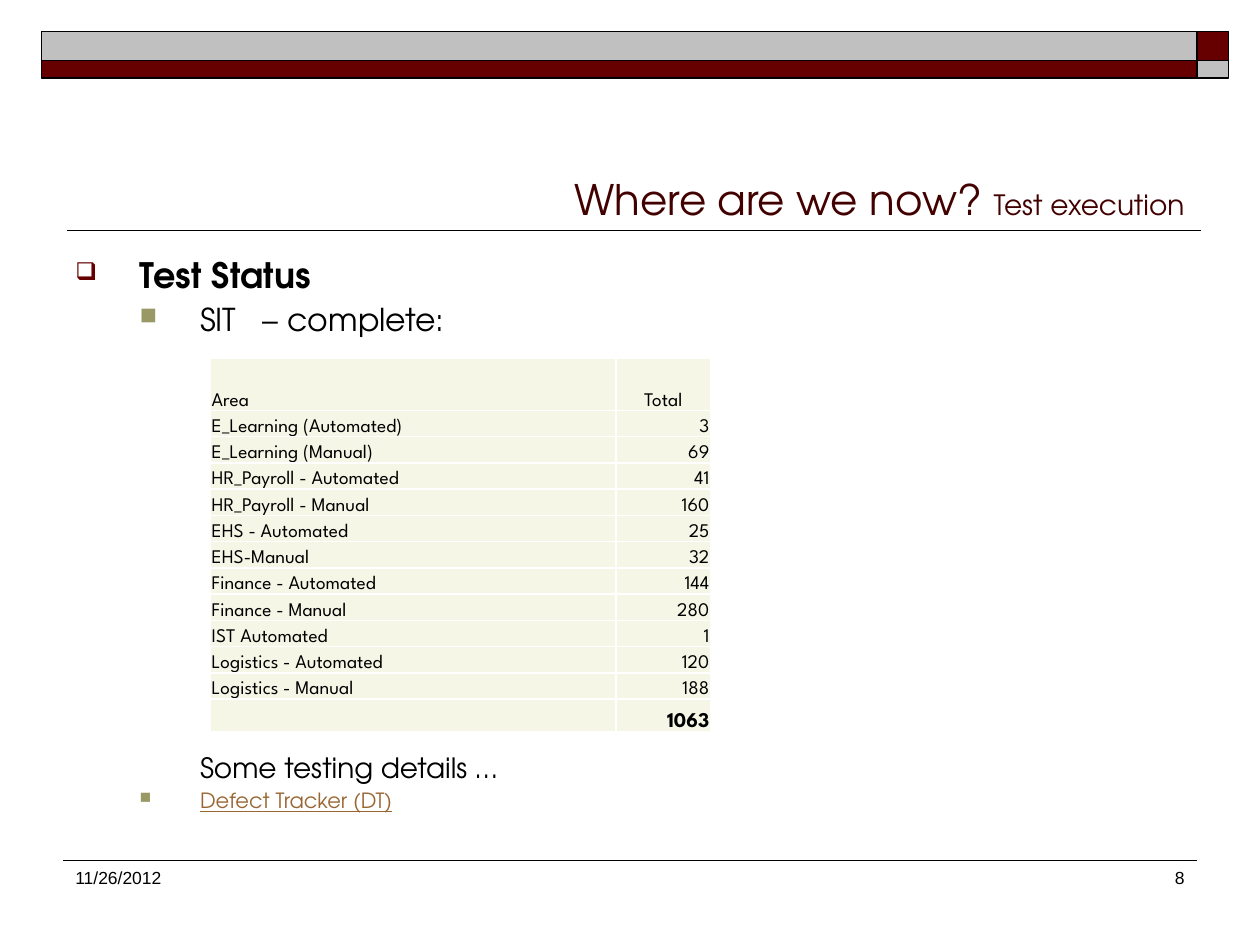
from lxml import etree
from pptx import Presentation
from pptx.dml.color import RGBColor
from pptx.enum.shapes import MSO_CONNECTOR, MSO_SHAPE
from pptx.enum.text import MSO_ANCHOR, PP_ALIGN
from pptx.oxml.ns import qn
from pptx.util import Inches, Pt

RECTANGLE, STRAIGHT = MSO_SHAPE.RECTANGLE, MSO_CONNECTOR.STRAIGHT
TOP, BOTTOM = MSO_ANCHOR.TOP, MSO_ANCHOR.BOTTOM
LEFT, CENTER, RIGHT = PP_ALIGN.LEFT, PP_ALIGN.CENTER, PP_ALIGN.RIGHT
HEADING_FONT, TABLE_FONT, FOOTER_FONT = "TeX Gyre Adventor", "League Spartan", "Arial"
COLORS = {
    "black": "000000", "white": "FFFFFF", "maroon": "660000", "silver": "C0C0C0",
    "title": "420000", "olive": "999966", "link": "996633", "cell": "F6F6E7",
}


def rgb(name):
    return RGBColor.from_string(COLORS[name])


def add_run(paragraph, text, font_name, size, color="black", **formats):
    run = paragraph.add_run()
    run.text = text
    run.font.color.rgb = rgb(color)
    for attribute, value in {"name": font_name, "size": Pt(size), **formats}.items():
        setattr(run.font, attribute, value)
    return run


prs = Presentation()
prs.slide_width, prs.slide_height = Inches(10), Inches(7.5)
slide = prs.slides.add_slide(prs.slide_layouts[6])
shapes = slide.shapes

for left, top, width, height, color in [
    (9.5, 0.25, 0.25, 0.23, "maroon"),
    (0.33, 0.25, 9.17, 0.23, "silver"),
    (0.33, 0.48, 9.17, 0.14, "maroon"),
    (9.5, 0.48, 0.25, 0.14, "silver"),
]:
    band = shapes.add_shape(RECTANGLE, Inches(left), Inches(top), Inches(width), Inches(height))
    band.shadow.inherit = False
    band.fill.solid()
    band.fill.fore_color.rgb = rgb(color)
    band.line.color.rgb = rgb("black")
    band.line.width = Pt(1)

for start, end, y, weight in [(0.53, 9.53, 1.83, 1), (0.5, 9.5, 6.83, 0.75)]:
    rule = shapes.add_connector(STRAIGHT, Inches(start), Inches(y), Inches(end), Inches(y))
    rule.line.color.rgb = rgb("black")
    rule.line.width = Pt(weight)
    etree.SubElement(rule._element.spPr, qn("a:effectLst"))

for left, top, width, height, anchor, align, runs in [
    (0.5, 6.83, 1.83, 0.5, TOP, LEFT, [("11/26/2012", FOOTER_FONT, 10, "black")]),
    (7.42, 6.83, 2.08, 0.5, TOP, RIGHT, [("8", FOOTER_FONT, 10, "black")]),
    (0.5, 0.58, 9, 1.25, BOTTOM, RIGHT, [
        ("Where are we now? ", HEADING_FONT, 24, "title"),
        ("Test execution", HEADING_FONT, 16, "title"),
    ]),
]:
    frame = shapes.add_textbox(Inches(left), Inches(top), Inches(width), Inches(height)).text_frame
    frame.word_wrap = True
    frame.vertical_anchor = anchor
    frame.paragraphs[0].alignment = align
    for run_values in runs:
        add_run(frame.paragraphs[0], *run_values)

TOPIC = {"margin": 0.51, "indent": -0.51, "bullet": ("❑", "maroon", 70)}
POINT = {"margin": 0.99, "indent": -0.48, "bullet": ("■", "olive", 75)}
PLAIN = {"margin": 0.99, "indent": 0, "bullet": None}
for top, height, lines in [
    (2, 0.8, [
        (TOPIC, 20, [("Test Status", "black", {"bold": True})]),
        (POINT, 18, [("SIT", "black", {}), (" ", "black", {}), ("– complete:", "black", {})]),
    ]),
    (5.94, 0.7, [
        (PLAIN, 16, [("Some testing details …", "black", {})]),
        (POINT, 12, [("Defect Tracker (DT)", "link", {"underline": True})]),
    ]),
]:
    frame = shapes.add_textbox(Inches(0.5), Inches(top), Inches(9), Inches(height)).text_frame
    frame.word_wrap = True
    for index, (level, size, runs) in enumerate(lines):
        paragraph = frame.add_paragraph() if index else frame.paragraphs[0]
        paragraph.line_spacing = 0.9
        if index:
            paragraph.space_before = Pt(size / 4)
        properties = paragraph._p.get_or_add_pPr()
        properties.set("marL", str(Inches(level["margin"])))
        properties.set("indent", str(Inches(level["indent"])))
        if level["bullet"]:
            symbol, color, percent = level["bullet"]
            bullet_color = etree.SubElement(properties, qn("a:buClr"))
            etree.SubElement(bullet_color, qn("a:srgbClr"), val=COLORS[color])
            etree.SubElement(properties, qn("a:buSzPct"), val=str(percent * 1000))
            etree.SubElement(properties, qn("a:buChar"), char=symbol)
        for text, color, formats in runs:
            run = add_run(paragraph, text, HEADING_FONT, size, color, **formats)
            if text == " ":
                run.font._element.set("spc", "1000")

test_counts = [
    ("Area", "Total"),
    ("E_Learning (Automated)", "3"),
    ("E_Learning (Manual)", "69"),
    ("HR_Payroll - Automated", "41"),
    ("HR_Payroll - Manual", "160"),
    ("EHS - Automated", "25"),
    ("EHS-Manual", "32"),
    ("Finance - Automated", "144"),
    ("Finance - Manual", "280"),
    ("IST Automated", "1"),
    ("Logistics - Automated", "120"),
    ("Logistics - Manual", "188"),
    ("", "1063"),
]
last = len(test_counts) - 1
row_height = 5 / 24
table = shapes.add_table(len(test_counts), 2, Inches(1.67), Inches(2.84),
                         Inches(3.97), Inches(2.97)).table
for column, width in zip(table.columns, (3.22, 0.75)):
    column.width = Inches(width)
cell_formats = {
    "margin_left": Inches(0.01), "margin_right": Inches(0.01),
    "margin_top": Inches(0.01), "margin_bottom": 0, "vertical_anchor": BOTTOM,
}
for row, values in enumerate(test_counts):
    table.rows[row].height = Inches({0: 2 * row_height, last: 0.26}.get(row, row_height))
    for column, text in enumerate(values):
        cell = table.cell(row, column)
        for attribute, value in cell_formats.items():
            setattr(cell, attribute, value)
        cell_properties = cell._tc.get_or_add_tcPr()
        for side in ("lnL", "lnR", "lnT", "lnB"):
            border = etree.SubElement(cell_properties, qn(f"a:{side}"), w=str(Pt(1)))
            border_fill = etree.SubElement(border, qn("a:solidFill"))
            etree.SubElement(border_fill, qn("a:srgbClr"), val=COLORS["white"])
        cell.fill.solid()
        cell.fill.fore_color.rgb = rgb("cell")
        paragraph = cell.text_frame.paragraphs[0]
        paragraph.alignment = LEFT if column == 0 else CENTER if row == 0 else RIGHT
        if text:
            add_run(paragraph, text, TABLE_FONT, 12 if row == last else 11, bold=row == last)
        else:
            etree.SubElement(paragraph._p, qn("a:endParaRPr"), sz="1100")

prs.save("out.pptx")
